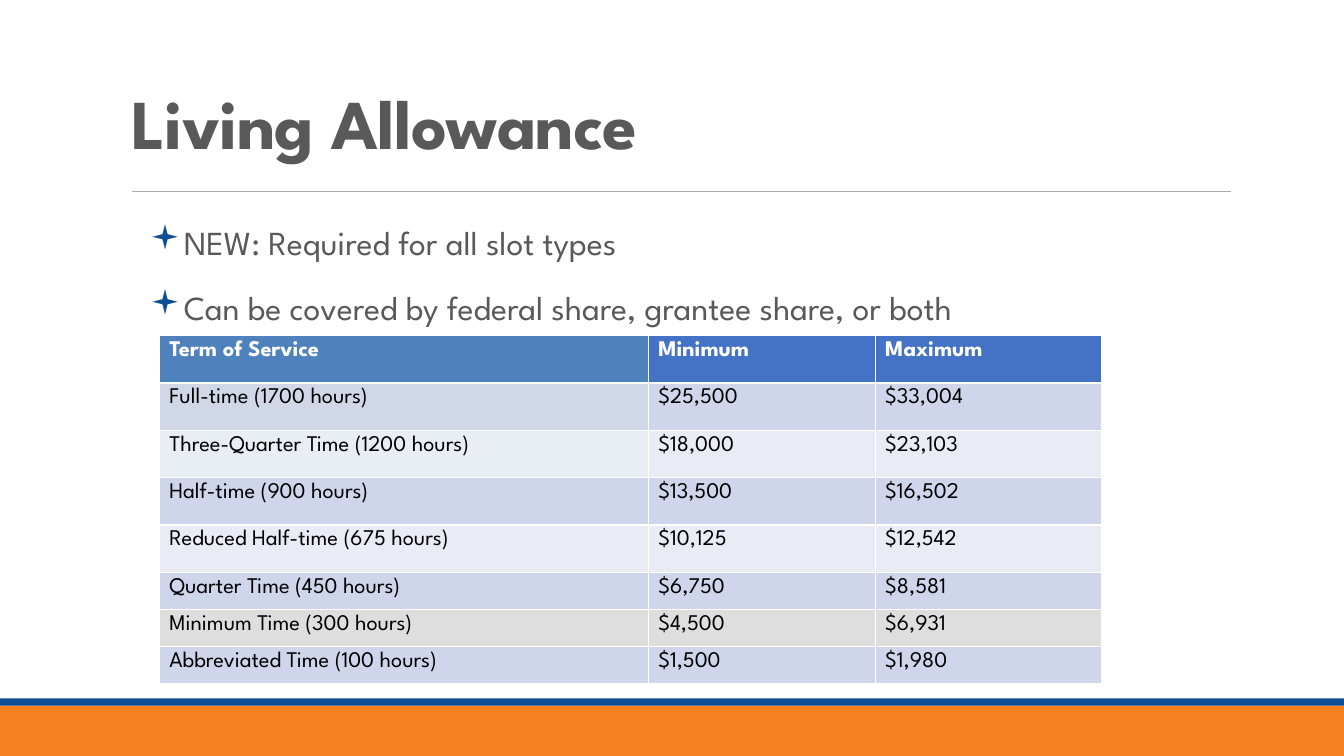
from pptx import Presentation
from pptx.dml.color import RGBColor
from pptx.enum.shapes import MSO_CONNECTOR, MSO_SHAPE
from pptx.enum.text import MSO_ANCHOR, PP_ALIGN
from pptx.oxml.ns import qn
from pptx.util import Inches, Pt
from lxml.etree import SubElement

FONT = "League Spartan"
HEX = {
    "orange": "F5801F", "navy": "0D4E95", "rule": "ACACAC", "gray": "595959",
    "white": "FFFFFF", "black": "000000", "steel": "4F81BD", "blue": "4472C4",
    "mist": "D0D8E8", "lilac": "CFD5EA", "ice": "E9EDF4", "pale": "E9EBF5",
    "ash": "DEDEDE",
}
TITLE = "Living Allowance"
POINTS = [
    "NEW: Required for all slot types",
    "Can be covered by federal share, grantee share, or both",
]
TERMS = [
    ("Term of Service", "Minimum", "Maximum"),
    ("Full-time (1700 hours)", "$25,500", "$33,004"),
    ("Three-Quarter Time (1200 hours)", "$18,000", "$23,103"),
    ("Half-time (900 hours)", "$13,500", "$16,502"),
    ("Reduced Half-time (675 hours)", "$10,125", "$12,542"),
    ("Quarter Time (450 hours)", "$6,750", "$8,581"),
    ("Minimum Time (300 hours)", "$4,500", "$6,931"),
    ("Abbreviated Time (100 hours)", "$1,500", "$1,980"),
]
FILLS = ["blue", "lilac", "pale", "lilac", "pale", "lilac", "ash", "lilac"]
FIRST = {0: "steel", 1: "mist", 2: "ice"}
COLS = [4.85, 2.25, 2.25]
ROWS = [0.47] * 5 + [0.3] * 3
WIDE, HIGH = 13.33, 7.5
BANDS = [("orange", 7, 0.5), ("navy", 6.93, 0.07)]


def color(name):
    return RGBColor.from_string(HEX[name])


def box(left, top, wide, high):
    return [Inches(n) for n in (left, top, wide, high)]


def style(para, size, name, bold=False):
    font = para.font
    font.name, font.size, font.bold = FONT, Pt(size), bold
    font.color.rgb = color(name)


def bullet(para):
    props = para._p.get_or_add_pPr()
    props.set("marL", str(Inches(0.63)))
    props.set("indent", str(Inches(-0.31)))
    tint = SubElement(props, qn("a:buClr"))
    SubElement(tint, qn("a:srgbClr"), val=HEX["navy"])
    SubElement(props, qn("a:buFont"), typeface="Wingdings")
    SubElement(props, qn("a:buChar"), char="▪")


def add_bands(slide):
    for name, top, high in BANDS:
        band = slide.shapes.add_shape(MSO_SHAPE.RECTANGLE, *box(0, top, WIDE, high))
        band.shadow.inherit = False
        band.fill.solid()
        band.fill.fore_color.rgb = color(name)
        band.line.fill.background()
    rule = slide.shapes.add_connector(
        MSO_CONNECTOR.STRAIGHT, *[Inches(n) for n in (1.31, 1.9, 12.21, 1.9)])
    rule.line.color.rgb = color("rule")
    rule.line.width = Pt(0.5)
    SubElement(rule._element.spPr, qn("a:effectLst"))


def add_title(slide):
    title = slide.shapes.title
    title.left, title.top, title.width, title.height = box(1.2, 0.73, 11, 0.94)
    frame = title.text_frame
    frame.text = TITLE
    frame.vertical_anchor = MSO_ANCHOR.BOTTOM
    para = frame.paragraphs[0]
    para.alignment = PP_ALIGN.LEFT
    para.line_spacing = 0.85
    style(para, 50, "gray", True)
    para.runs[0].font._element.set("spc", "-50")


def add_points(slide):
    frame = slide.shapes.add_textbox(*box(1.17, 2.07, 11, 4.4)).text_frame
    frame.word_wrap = True
    frame.margin_left = frame.margin_right = 0
    frame.text = "\n".join(POINTS)
    for para in frame.paragraphs:
        para.line_spacing = 1.2
        para.space_before = para.space_after = Pt(6)
        style(para, 24, "gray")
        bullet(para)


def add_terms(slide):
    place = box(1.58, 3.33, sum(COLS), sum(ROWS))
    table = slide.shapes.add_table(len(ROWS), len(COLS), *place).table
    for col, wide in zip(table.columns, COLS):
        col.width = Inches(wide)
    for r, (row, high) in enumerate(zip(table.rows, ROWS)):
        row.height = Inches(high)
        for c, cell in enumerate(row.cells):
            cell.text = TERMS[r][c]
            cell.fill.solid()
            name = FILLS[r] if c else FIRST.get(r, FILLS[r])
            cell.fill.fore_color.rgb = color(name)
            style(cell.text_frame.paragraphs[0], 16,
                  "black" if r else "white", r == 0)


def main():
    deck = Presentation()
    deck.slide_width, deck.slide_height = Inches(WIDE), Inches(HIGH)
    slide = deck.slides.add_slide(deck.slide_layouts[5])
    add_bands(slide)
    add_title(slide)
    add_points(slide)
    add_terms(slide)
    deck.save("out.pptx")


if __name__ == "__main__":
    main()
